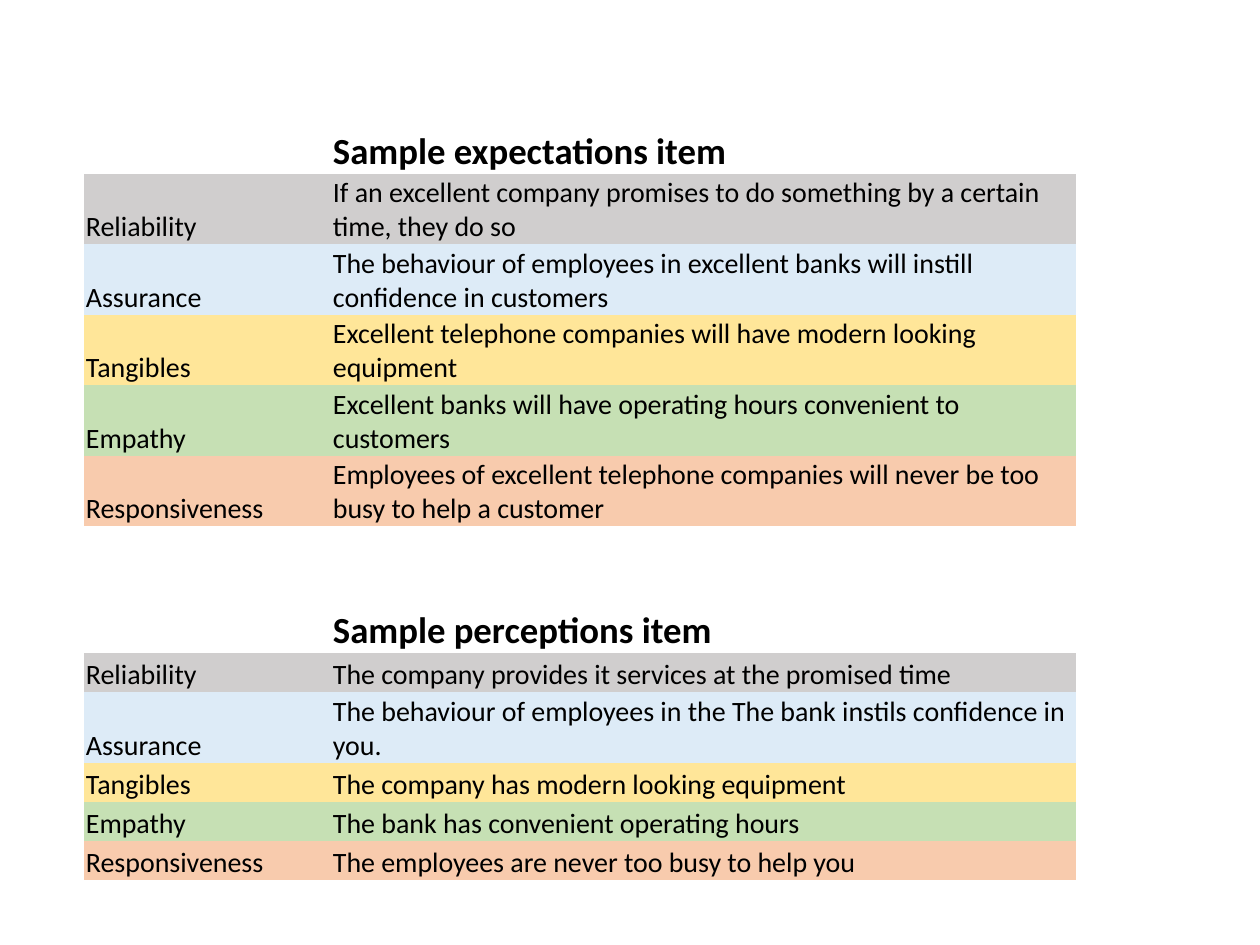
"""Build a slide with a table of sample service-quality survey items."""
from dataclasses import dataclass

import pptx
import pptx.dml.color
import pptx.enum.text
import pptx.oxml.ns
import pptx.table
import pptx.util

PX = 914400 / 126
COLORS = {
    "": "FFFFFF",
    "Reliability": "D0CECE",
    "Assurance": "DDEBF7",
    "Tangibles": "FFE699",
    "Empathy": "C6E0B4",
    "Responsiveness": "F8CBAD",
    "text": "000000",
}
NO_STYLE = "{2D5ABB26-0587-4C30-8999-92F81FD0307C}"
HEADING, SINGLE, DOUBLE = 49, 39, 70
COLUMNS = (247, 745)


@dataclass(frozen=True)
class Item:
    dimension: str
    wording: str
    height: int
    heading: bool = False


ITEMS = (
    Item("", "Sample expectations item", HEADING, True),
    Item("Reliability", "If an excellent company promises to do something by a certain time, they do so", DOUBLE),
    Item("Assurance", "The behaviour of employees in excellent banks will instill confidence in customers", DOUBLE),
    Item("Tangibles", "Excellent telephone companies will have modern looking equipment", DOUBLE),
    Item("Empathy", "Excellent banks will have operating hours convenient to customers", DOUBLE),
    Item("Responsiveness", "Employees of excellent telephone companies will never be too busy to help a customer", DOUBLE),
    Item("", "", SINGLE),
    Item("", "", SINGLE),
    Item("", "Sample perceptions item", HEADING, True),
    Item("Reliability", "The company provides it services at the promised time", SINGLE),
    Item("Assurance", "The behaviour of employees in the The bank instils confidence in you.", DOUBLE),
    Item("Tangibles", "The company has modern looking equipment", SINGLE),
    Item("Empathy", "The bank has convenient operating hours", SINGLE),
    Item("Responsiveness", "The employees are never too busy to help you", SINGLE),
)


def px(length: int) -> pptx.util.Emu:
    """Turn pixels into EMU."""
    return pptx.util.Emu(round(length * PX))


def rgb(name: str) -> pptx.dml.color.RGBColor:
    """Look up a named colour."""
    return pptx.dml.color.RGBColor.from_string(COLORS[name])


def fill_cell(cell: pptx.table._Cell, text: str, item: Item) -> None:
    """Write and format one cell of an item's row."""
    cell.fill.solid()
    cell.fill.fore_color.rgb = rgb(item.dimension)
    cell.vertical_anchor = pptx.enum.text.MSO_ANCHOR.BOTTOM
    cell.margin_left = cell.margin_right = cell.margin_top = px(2)
    cell.margin_bottom = 0
    para = cell.text_frame.paragraphs[0]
    para.text = text
    para.font.name = "Calibri"
    para.font.size = pptx.util.Pt(21 if item.heading else 16)
    para.font.bold = item.heading
    para.font.color.rgb = rgb("text")


def main() -> None:
    """Build and save the deck."""
    deck = pptx.Presentation()
    deck.slide_width, deck.slide_height = px(1260), px(945)
    page = deck.slides.add_slide(deck.slide_layouts[6])
    height = sum(item.height for item in ITEMS)
    frame = page.shapes.add_table(
        len(ITEMS), len(COLUMNS), px(84), px(125), px(sum(COLUMNS)), px(height)
    )
    table = frame.table
    table.first_row = table.horz_banding = False
    table._tbl.tblPr.find(pptx.oxml.ns.qn("a:tableStyleId")).text = NO_STYLE
    for column, width in zip(table.columns, COLUMNS):
        column.width = px(width)
    for row, item in zip(table.rows, ITEMS):
        row.height = px(item.height)
        for cell, text in zip(row.cells, (item.dimension, item.wording)):
            fill_cell(cell, text, item)
    deck.save("out.pptx")


if __name__ == "__main__":
    main()
